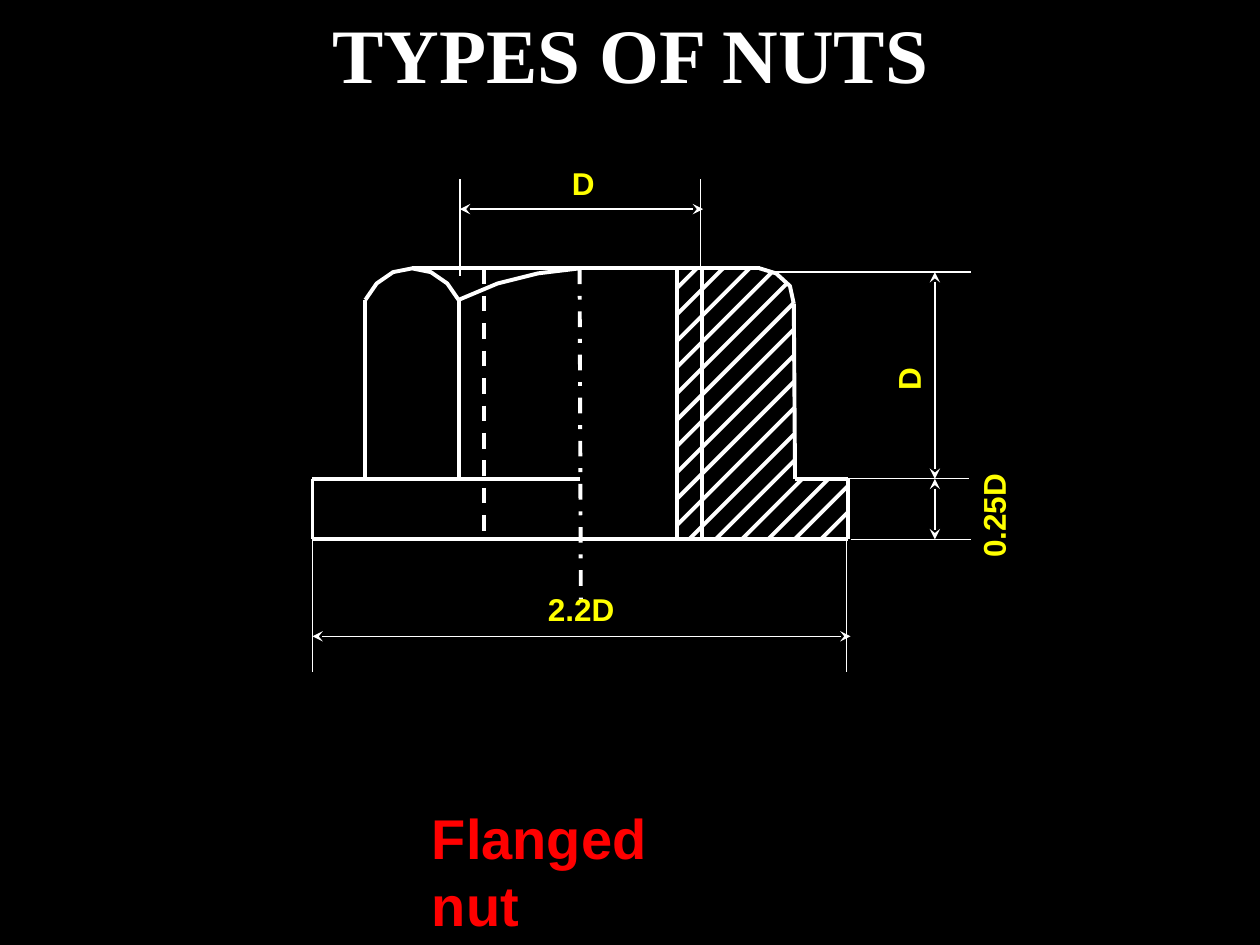
from dataclasses import dataclass
from itertools import pairwise

import pptx
import pptx.dml.color
import pptx.enum.dml
import pptx.enum.shapes
import pptx.enum.text
import pptx.oxml
import pptx.util
from pptx.util import Inches

RGBColor = pptx.dml.color.RGBColor
Dash = pptx.enum.dml.MSO_LINE
Align = pptx.enum.text.PP_ALIGN
Point = tuple[float, float]

BLACK = RGBColor(0x00, 0x00, 0x00)
WHITE = RGBColor(0xFF, 0xFF, 0xFF)
RED = RGBColor(0xFF, 0x00, 0x00)
YELLOW = RGBColor(0xFF, 0xFF, 0x00)
THICK, THIN = 2.25, 0.75

# Edges of the nut, in inches
TOP, SEAT, BASE = 2.13, 3.8, 4.28
LEFT, RIGHT = 2.48, 6.73
SIDE, RIDGE, MID = 2.9, 3.64, 4.6
BORE, ROOT, WALL = 5.37, 5.57, 6.31
SHOULDER = 2.38
DIM_X = 7.42
HATCH_START, HATCH_STEP, HATCH_COUNT = 7.66, 0.209, 16


@dataclass
class Label:
    text: str
    left: float
    top: float
    width: float
    height: float
    size: float = 18
    color: RGBColor = YELLOW
    face: str = "Arial"
    align: Align = Align.LEFT
    turn: float = 0
    wrap: bool = False


@dataclass
class Line:
    start: Point
    end: Point
    width: float = THICK
    dash: Dash | None = None
    arrows: bool = False


LABELS = [
    Label("Flanged nut", 3.33, 6.33, 2.71, 0.63, 32, RED, wrap=True),
    Label("TYPES OF NUTS", 2.17, 0, 5.67, 0.83, 44, WHITE,
          "Times New Roman", Align.CENTER, wrap=True),
    Label("D", 7.02, 2.81, 0.38, 0.4, turn=270),
    Label("0.25D", 7.45, 3.89, 0.87, 0.4, turn=270),
    Label("2.2D", 4.25, 4.63, 0.73, 0.4),
    Label("D", 4.44, 1.25, 0.38, 0.4),
]

CORNER = [(6.03, TOP), (6.16, 2.17), (6.27, 2.27), (6.3, 2.41)]
CURVES = [
    [(MID, TOP), (4.27, 2.17), (3.95, 2.25), (RIDGE, SHOULDER)],
    [(RIDGE, SHOULDER), (3.55, 2.25), (3.42, 2.16), (3.27, TOP),
     (3.12, 2.16), (2.99, 2.25), (SIDE, SHOULDER)],
    CORNER,
]
# Upper right boundary of the cut half, from bore to base
SECTION = [(BORE, TOP), *CORNER, (WALL, SEAT), (RIGHT, SEAT), (RIGHT, BASE)]

EDGES = [
    Line((MID, TOP), (4.61, 4.76), dash=Dash.DASH_DOT),
    Line((3.84, TOP), (3.84, BASE), dash=Dash.DASH),
    Line((BORE, TOP), (BORE, BASE)),
    Line((ROOT, TOP), (ROOT, BASE)),
    Line((SIDE, SHOULDER), (SIDE, SEAT)),
    Line((RIDGE, SHOULDER), (RIDGE, SEAT)),
    Line((6.3, 2.41), (WALL, SEAT)),
    Line((LEFT, SEAT), (LEFT, BASE)),
    Line((RIGHT, SEAT), (RIGHT, BASE)),
    Line((3.27, TOP), (6.03, TOP)),
    Line((LEFT, SEAT), (MID, SEAT)),
    Line((WALL, SEAT), (RIGHT, SEAT)),
    Line((LEFT, BASE), (RIGHT, BASE)),
]

GUIDES = [
    Line((LEFT, BASE), (LEFT, 5.33), THIN),
    Line((6.72, BASE), (6.72, 5.33), THIN),
    Line((LEFT, 5.05), (6.75, 5.05), THIN, arrows=True),
    Line((6.75, BASE), (7.71, BASE), THIN),
    Line((6.72, SEAT), (7.69, SEAT), THIN),
    Line((6.16, 2.16), (7.71, 2.16), THIN),
    Line((DIM_X, 2.16), (DIM_X, SEAT), THIN, arrows=True),
    Line((DIM_X, SEAT), (DIM_X, BASE), THIN, arrows=True),
    Line((3.65, 2.19), (3.65, 1.42), THIN),
    Line((5.56, 2.19), (5.56, 1.42), THIN),
    Line((3.65, 1.66), (5.58, 1.66), THIN, arrows=True),
]


def hatch() -> list[Line]:
    """Return the 45 degree lines, on each of which x + y is constant."""
    lines = []
    for i in range(HATCH_COUNT):
        total = HATCH_START + i * HATCH_STEP
        x = max(BORE, total - BASE)
        for a, b in pairwise(SECTION):
            if sum(a) <= total <= sum(b):
                part = (total - sum(a)) / (sum(b) - sum(a))
                end = tuple(p + part * (q - p) for p, q in zip(a, b))
                lines.append(Line((x, total - x), end))
                break
    return lines


def style(shape, width: float, dash: Dash | None = None) -> None:
    shape.line.color.rgb = WHITE
    shape.line.width = pptx.util.Pt(width)
    if dash is not None:
        shape.line.dash_style = dash


def add_line(shapes, item: Line) -> None:
    ends = [Inches(v) for v in (*item.start, *item.end)]
    kind = pptx.enum.shapes.MSO_CONNECTOR.STRAIGHT
    shape = shapes.add_connector(kind, *ends)
    style(shape, item.width, item.dash)
    if item.arrows:
        for tag in ("a:headEnd", "a:tailEnd"):
            tip = pptx.oxml.xmlchemy.OxmlElement(tag)
            tip.set("type", "stealth")
            shape.line._get_or_add_ln().append(tip)
    props = shape._element.spPr
    props.append(pptx.oxml.xmlchemy.OxmlElement("a:effectLst"))


def add_curve(shapes, points: list[Point]) -> None:
    first, *rest = [(Inches(x), Inches(y)) for x, y in points]
    pen = shapes.build_freeform(*first)
    pen.add_line_segments(rest, close=False)
    shape = pen.convert_to_shape()
    shape.fill.background()
    shape.shadow.inherit = False
    style(shape, THICK)


def add_label(shapes, item: Label) -> None:
    place = (item.left, item.top, item.width, item.height)
    box = shapes.add_textbox(*map(Inches, place))
    box.rotation = item.turn
    frame = box.text_frame
    frame.word_wrap = item.wrap
    frame.auto_size = pptx.enum.text.MSO_AUTO_SIZE.SHAPE_TO_FIT_TEXT
    para = frame.paragraphs[0]
    para.alignment = item.align
    run = para.add_run()
    run.text = item.text
    form = {"name": item.face, "size": pptx.util.Pt(item.size), "bold": True}
    for key, value in form.items():
        setattr(run.font, key, value)
    run.font.color.rgb = item.color


def main() -> None:
    deck = pptx.Presentation()
    deck.slide_width, deck.slide_height = Inches(10), Inches(7.5)
    slide = deck.slides.add_slide(deck.slide_layouts[6])
    fill = slide.background.fill
    fill.solid()
    fill.fore_color.rgb = BLACK
    for points in CURVES:
        add_curve(slide.shapes, points)
    for item in EDGES + hatch() + GUIDES:
        add_line(slide.shapes, item)
    for item in LABELS:
        add_label(slide.shapes, item)
    deck.save("out.pptx")


if __name__ == "__main__":
    main()
